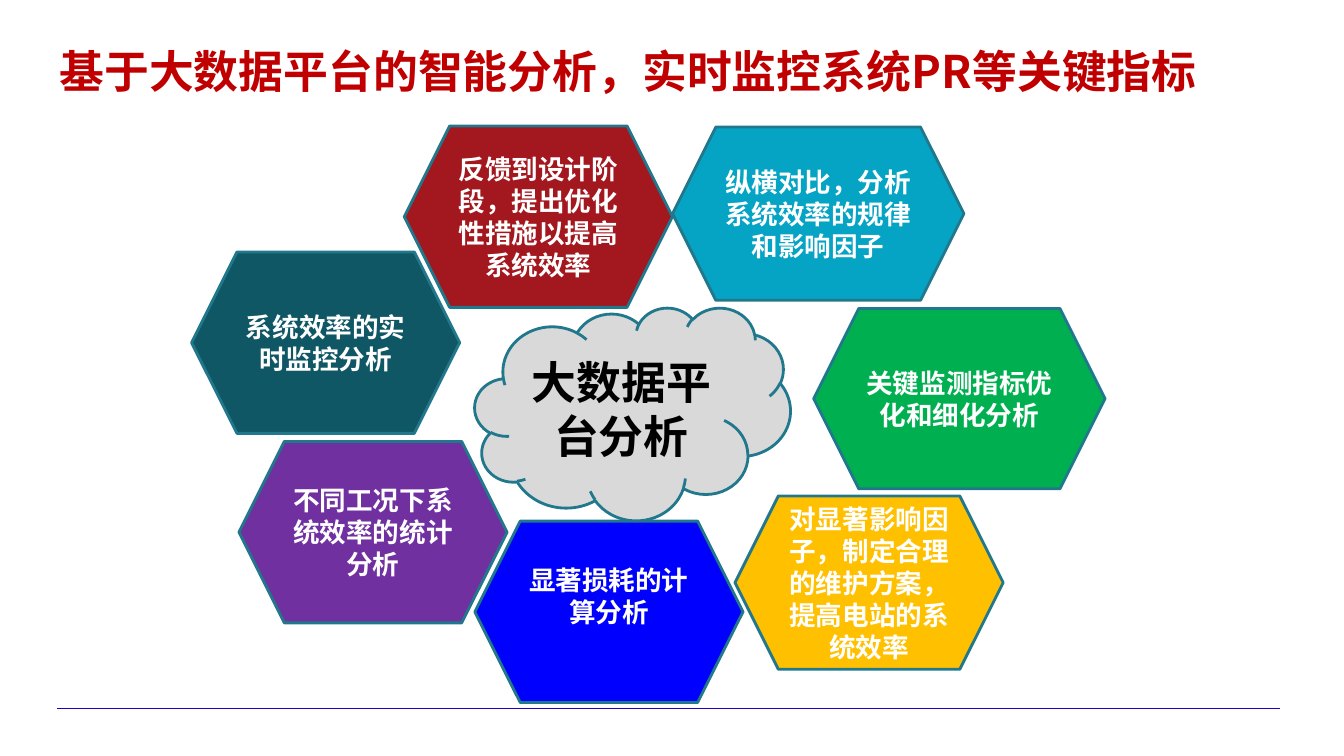
from pptx import Presentation
from pptx import util as u
from pptx.dml.color import RGBColor
from pptx.enum import shapes, text
from pptx.oxml.ns import qn
from lxml import etree

FONT = "Noto Sans CJK SC"
OUTLINE = "21788D"
TITLE = "基于大数据平台的智能分析，实时监控系统PR等关键指标"
HUB = ("大数据平台分析", "D9D9D9", (4.71, 3.05, 3.13, 2.11))
LOSS = "显著损耗的计算分析"
# Text, fill, (left, top, width, height)
TOPICS = [
    ("系统效率的实时监控分析", "105766", (1.9, 2.5, 2.66, 1.8)),
    (LOSS, "0000FF", (4.71, 5.17, 2.66, 1.8)),
    ("对显著影响因子，制定合理的维护方案，提高电站的系统效率", "FFC000", (7.29, 4.92, 2.66, 1.72)),
    ("关键监测指标优化和细化分析", "00B050", (8.07, 3.06, 2.89, 1.79)),
    ("不同工况下系统效率的统计分析", "7030A0", (2.37, 4.38, 2.66, 1.8)),
    ("纵横对比，分析系统效率的规律和影响因子", "05A3C4", (6.67, 1.26, 2.89, 1.72)),
    ("反馈到设计阶段，提出优化性措施以提高系统效率", "A3171E", (4.01, 1.25, 2.66, 1.8)),
]


def color(value):
    return RGBColor.from_string(value)


def write(shape, words, size, ink, align, inset_x, inset_y):
    frame = shape.text_frame
    frame.word_wrap = True
    frame.auto_size = text.MSO_AUTO_SIZE.NONE
    frame.vertical_anchor = text.MSO_ANCHOR.MIDDLE
    frame.margin_left = frame.margin_right = u.Inches(inset_x)
    frame.margin_top = frame.margin_bottom = u.Inches(inset_y)
    para = frame.paragraphs[0]
    para.alignment = align
    para.line_spacing = u.Pt(size * 1.2)
    span = para.add_run()
    span.text = words
    font = para.font
    font.size, font.bold, font.name = u.Pt(size), True, FONT
    font.color.rgb = color(ink)
    # East Asian typeface, for the Chinese characters
    for props in (para._p.pPr.find(qn("a:defRPr")), span._r.get_or_add_rPr()):
        etree.SubElement(props, qn("a:ea"), typeface=FONT)
    # Run-level settings, since the paragraph defaults are not always applied
    span.font.size, span.font.bold, span.font.name = u.Pt(size), True, FONT
    span.font.color.rgb = color(ink)


def add_node(page, preset, words, fill, place, size, ink):
    node = page.shapes.add_shape(preset, *map(u.Inches, place))
    node.shadow.inherit = False
    node.fill.solid()
    node.fill.fore_color.rgb = color(fill)
    node.line.color.rgb = color(OUTLINE)
    node.line.width = u.Pt(2)
    write(node, words, size, ink, text.PP_ALIGN.CENTER, 0.12, 0.06)
    return node


deck = Presentation()
deck.slide_width, deck.slide_height = u.Inches(13.33), u.Inches(7.5)
page = deck.slides.add_slide(deck.slide_layouts[5])

# Footer rule
rule = page.shapes.add_connector(
    shapes.MSO_CONNECTOR.STRAIGHT, *map(u.Inches, (0.57, 7.03, 12.7, 7.03)))
rule.line.color.rgb = color("1B05BB")
rule.line.width = u.Pt(0.75)
etree.SubElement(rule._element.spPr, qn("a:effectLst"))

# Title
title = page.shapes.title
title.left, title.top, title.width, title.height = map(u.Inches, (0.49, 0.38, 12.84, 0.64))
write(title, TITLE, 32, "C00000", text.PP_ALIGN.LEFT, 0.1, 0.05)

# Ring of topics
for words, fill, place in TOPICS:
    topic = add_node(page, shapes.MSO_SHAPE.HEXAGON, words, fill, place, 19, "FFFFFF")
    if words == LOSS:  # sits one text line higher, clear of the rule
        topic.text_frame.margin_bottom = u.Inches(0.38)

# Central cloud
add_node(page, shapes.MSO_SHAPE.CLOUD, *HUB, 32, "000000")

deck.save("out.pptx")
